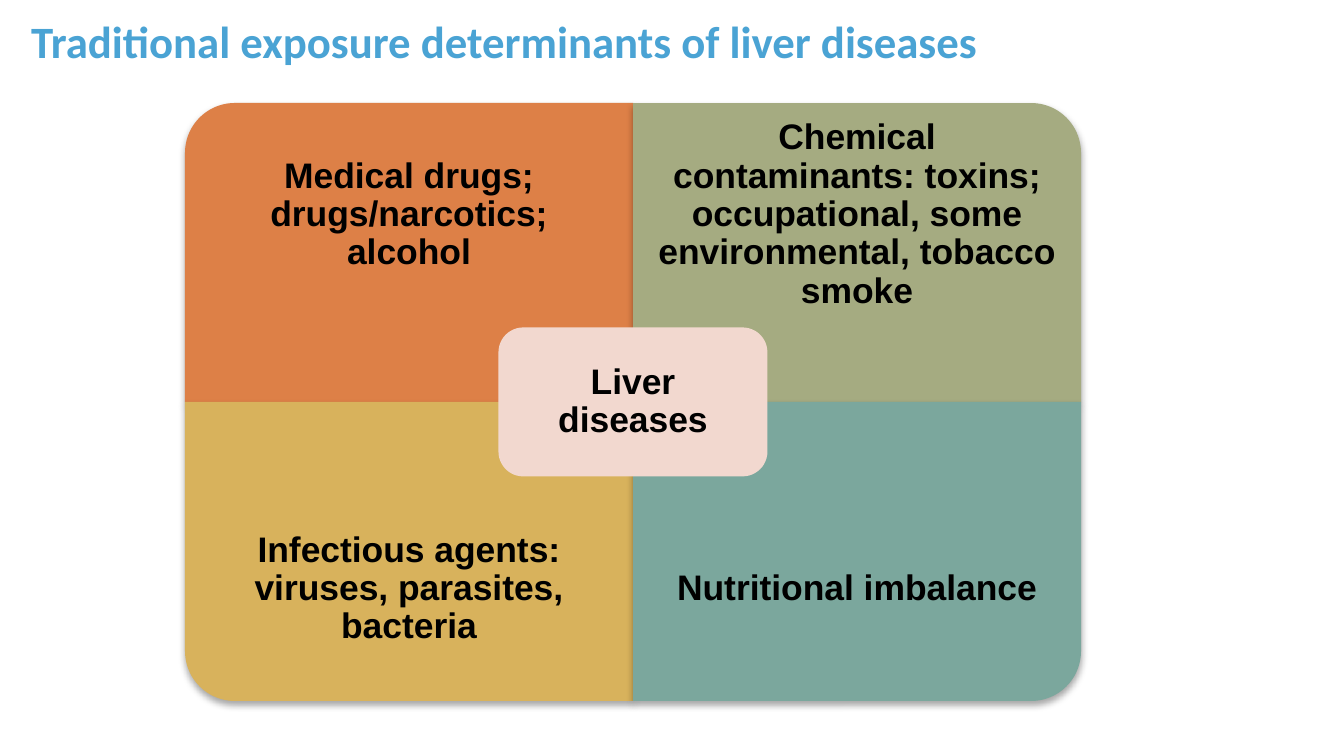
from dataclasses import dataclass

from lxml import etree
from pptx import Presentation
from pptx import util as u
from pptx.dml.color import RGBColor
from pptx.enum import shapes, text
from pptx.oxml.ns import qn

EMU_PER_PX = 914400 / 134.4


@dataclass(frozen=True)
class Theme:
    title_color: str = "4AA3D4"
    ink: str = "000000"
    center: str = "F2D8CF"
    drugs: str = "DD8047"
    chemicals: str = "A5AB81"
    infections: str = "D8B25C"
    nutrition: str = "7BA79D"
    title_font: str = "Calibri"
    body_font: str = "Arial"
    title_size: int = 24
    body_size: int = 19


THEME = Theme()

# Matrix geometry, in px
LEFT, TOP = 185, 103
QUAD_W, QUAD_H = 448, 299
LABEL_H = 224
CENTER_W, CENTER_H = 269, 149

# Column, row, rotation that turns the round corner outwards, colour, label
QUADRANTS = [
    (0, 0, 270, THEME.drugs, "Medical drugs; drugs/narcotics; alcohol"),
    (1, 0, 0, THEME.chemicals,
     "Chemical contaminants: toxins; occupational, some environmental, tobacco smoke"),
    (0, 1, 180, THEME.infections, "Infectious agents: viruses, parasites, bacteria"),
    (1, 1, 90, THEME.nutrition, "Nutritional imbalance"),
]


def px(*lengths):
    return [u.Emu(round(length * EMU_PER_PX)) for length in lengths]


def write(shape, words, font, size, color, align, inset_x, inset_y):
    frame = shape.text_frame
    frame.text = words
    frame.word_wrap = True
    frame.auto_size = text.MSO_AUTO_SIZE.NONE
    frame.vertical_anchor = text.MSO_ANCHOR.MIDDLE
    frame.margin_left, frame.margin_right = px(inset_x, inset_x)
    frame.margin_top, frame.margin_bottom = px(inset_y, inset_y)
    paragraph = frame.paragraphs[0]
    paragraph.alignment = align
    for run in paragraph.runs:
        run.font.name = font
        run.font.size = u.Pt(size)
        run.font.bold = True
        run.font.color.rgb = RGBColor.from_string(color)


def write_label(shape, words, inset):
    write(shape, words, THEME.body_font, THEME.body_size, THEME.ink,
          text.PP_ALIGN.CENTER, inset, inset)
    shape.text_frame.paragraphs[0].line_spacing = 0.9


def add_panel(slide, kind, box, color):
    panel = slide.shapes.add_shape(kind, *px(*box))
    panel.fill.solid()
    panel.fill.fore_color.rgb = RGBColor.from_string(color)
    panel.line.fill.background()
    panel.shadow.inherit = False
    return panel


def add_soft_shadow(panel):
    effects = panel._element.spPr.find(qn("a:effectLst"))
    shadow = etree.SubElement(
        effects, qn("a:outerShdw"), blurRad=str(u.Pt(4)), dist=str(u.Pt(2)),
        dir="5400000", rotWithShape="0")
    color = etree.SubElement(shadow, qn("a:srgbClr"), val="000000")
    etree.SubElement(color, qn("a:alpha"), val="35000")


def add_title(slide, words):
    title = slide.shapes.title
    title.left, title.top, title.width, title.height = px(21, 11, 1301, 59)
    write(title, words, THEME.title_font, THEME.title_size, THEME.title_color,
          text.PP_ALIGN.LEFT, 10, 5)


def add_quadrant(slide, column, row, rotation, color, words):
    left, top = LEFT + column * QUAD_W, TOP + row * QUAD_H
    # A quarter turn swaps width and height about the same centre
    width, height = (QUAD_H, QUAD_W) if rotation % 180 else (QUAD_W, QUAD_H)
    box = (left + (QUAD_W - width) / 2, top + (QUAD_H - height) / 2, width, height)
    panel = add_panel(slide, shapes.MSO_SHAPE.ROUND_1_RECTANGLE, box, color)
    panel.rotation = rotation
    add_soft_shadow(panel)

    # Labels keep to the outer part, clear of the centre box
    label_top = top + row * (QUAD_H - LABEL_H)
    label = slide.shapes.add_textbox(*px(left, label_top, QUAD_W, LABEL_H))
    write_label(label, words, inset=20)


def add_center(slide, words):
    box = (LEFT + QUAD_W - CENTER_W / 2, TOP + QUAD_H - CENTER_H / 2, CENTER_W, CENTER_H)
    center = add_panel(slide, shapes.MSO_SHAPE.ROUNDED_RECTANGLE, box, THEME.center)
    write_label(center, words, inset=10)


def main():
    deck = Presentation()
    deck.slide_width, deck.slide_height = px(1344, 756)
    slide = deck.slides.add_slide(deck.slide_layouts[5])

    add_title(slide, "Traditional exposure determinants of liver diseases")
    for quadrant in QUADRANTS:
        add_quadrant(slide, *quadrant)
    add_center(slide, "Liver diseases")

    deck.save("out.pptx")


if __name__ == "__main__":
    main()
